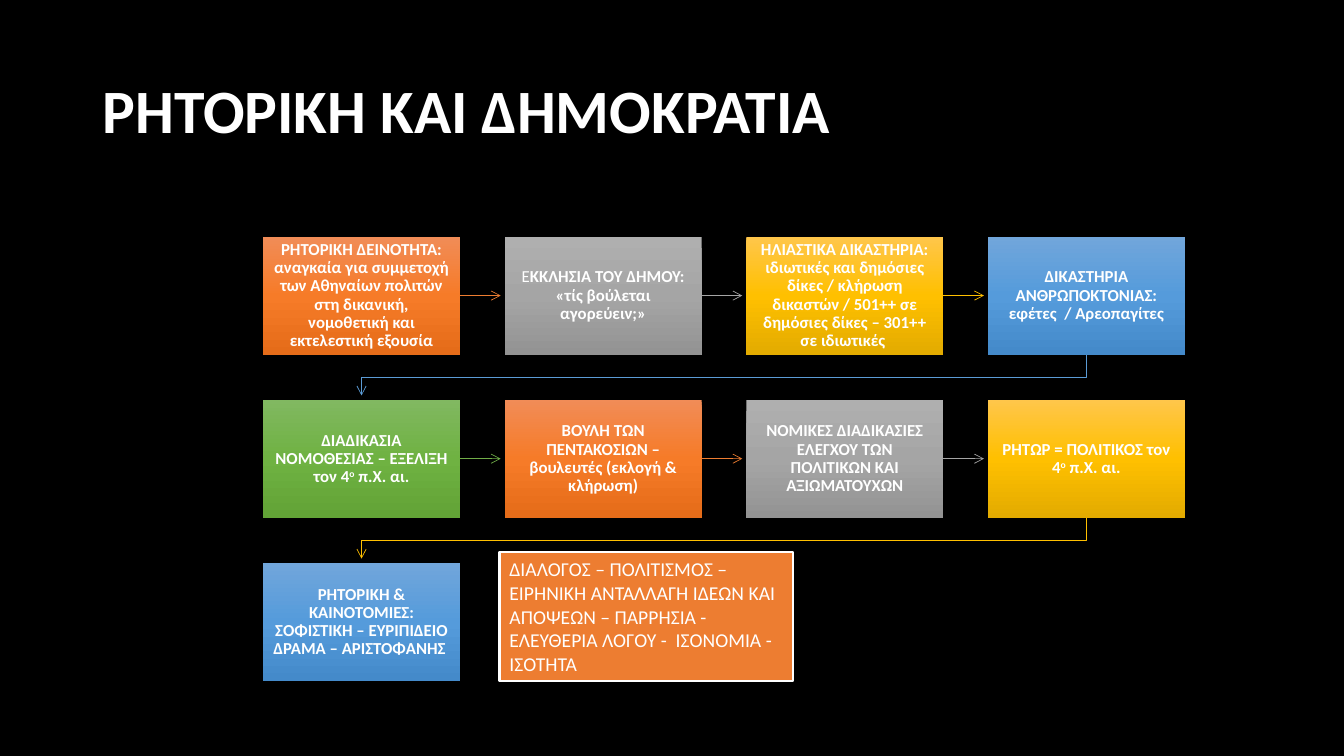
"""Build a slide on rhetoric and democracy as a snaking chain of steps."""
from copy import deepcopy
from dataclasses import dataclass

from lxml import etree
from pptx import Presentation
from pptx.dml.color import RGBColor
from pptx.enum.shapes import MSO_CONNECTOR, MSO_SHAPE
from pptx.enum.text import MSO_ANCHOR, MSO_AUTO_SIZE, PP_ALIGN
from pptx.oxml.ns import qn
from pptx.util import Pt

RECTANGLE = MSO_SHAPE.RECTANGLE
STRAIGHT = MSO_CONNECTOR.STRAIGHT
MIDDLE, TOP = MSO_ANCHOR.MIDDLE, MSO_ANCHOR.TOP
NO_FIT, GROW = MSO_AUTO_SIZE.NONE, MSO_AUTO_SIZE.SHAPE_TO_FIT_TEXT
LEFT, CENTER = PP_ALIGN.LEFT, PP_ALIGN.CENTER
RIGHT_SIDE = 3


@dataclass(frozen=True)
class Theme:
    """Colours, font and type sizes of the slide."""
    font: str = "Calibri"
    background: str = "000000"
    text: str = "FFFFFF"
    title_size: float = 44
    step_size: float = 12
    note_size: float = 14
    arrow_width: float = 0.5
    note_border: float = 1.5
    orange: tuple = ("ED7D31", "F18C57", "F67B28", "E56C19")
    grey: tuple = ("A5A5A5", "AFAFAF", "A5A5A5", "939393")
    gold: tuple = ("FFC000", "FFC64B", "FFC000", "E3AB00")
    blue: tuple = ("5B9BD5", "71A6DB", "559BDB", "448ACA")
    green: tuple = ("70AD47", "81B861", "6FB242", "62A336")


THEME = Theme()
PALETTE = (THEME.orange, THEME.grey, THEME.gold, THEME.blue, THEME.green)

COLUMNS = 4
GRID_LEFT, GRID_TOP = 188, 169
STEP_WIDTH, STEP_HEIGHT = 140.5, 84.3
COLUMN_PITCH, ROW_PITCH = 172.6, 116.5
ARROW_GAP = 3

PLAIN, BOLD, RAISED = "plain", "bold", "raised"
CENTURY = [("ο", RAISED), (" π.Χ. αι.", BOLD)]
STEPS = [
    [("ΡΗΤΟΡΙΚΗ ΔΕΙΝΟΤΗΤΑ: αναγκαία για συμμετοχή των Αθηναίων πολιτών "
      "στη δικανική, νομοθετική και εκτελεστική εξουσία", BOLD)],
    [("Ε", PLAIN), ("ΚΚΛΗΣΙΑ ΤΟΥ ΔΗΜΟΥ: «τίς βούλεται αγορεύειν;»", BOLD)],
    [("ΗΛΙΑΣΤΙΚΑ ΔΙΚΑΣΤΗΡΙΑ: ιδιωτικές και δημόσιες δίκες / κλήρωση "
      "δικαστών / 501++ σε δημόσιες δίκες – 301++ σε ιδιωτικές ", BOLD)],
    [("ΔΙΚΑΣΤΗΡΙΑ ΑΝΘΡΩΠΟΚΤΟΝΙΑΣ: εφέτες  / Αρεοπαγίτες", BOLD)],
    [("ΔΙΑΔΙΚΑΣΙΑ ΝΟΜΟΘΕΣΙΑΣ – ΕΞΕΛΙΞΗ τον 4", BOLD), *CENTURY],
    [("ΒΟΥΛΗ ΤΩΝ ΠΕΝΤΑΚΟΣΙΩΝ – βουλευτές (εκλογή & κλήρωση)", BOLD)],
    [("ΝΟΜΙΚΕΣ ΔΙΑΔΙΚΑΣΙΕΣ ΕΛΕΓΧΟΥ ΤΩΝ ΠΟΛΙΤΙΚΩΝ ΚΑΙ ΑΞΙΩΜΑΤΟΥΧΩΝ", BOLD)],
    [("ΡΗΤΩΡ = ΠΟΛΙΤΙΚΟΣ τον 4", BOLD), *CENTURY],
    [("ΡΗΤΟΡΙΚΗ & ΚΑΙΝΟΤΟΜΙΕΣ: ΣΟΦΙΣΤΙΚΗ – ΕΥΡΙΠΙΔΕΙΟ ΔΡΑΜΑ – "
      "ΑΡΙΣΤΟΦΑΝΗΣ ", BOLD)],
]
NOTE = [("ΔΙΑΛΟΓΟΣ – ΠΟΛΙΤΙΣΜΟΣ – ΕΙΡΗΝΙΚΗ ΑΝΤΑΛΛΑΓΗ ΙΔΕΩΝ ΚΑΙ ΑΠΟΨΕΩΝ – "
         "ΠΑΡΡΗΣΙΑ - ΕΛΕΥΘΕΡΙΑ ΛΟΓΟΥ -  ΙΣΟΝΟΜΙΑ -  ΙΣΟΤΗΤΑ", PLAIN)]


def rgb(code):
    """Turn a hex code into a colour."""
    return RGBColor.from_string(code)


def apply(target, formats):
    """Set each format value on the target."""
    for name, value in formats.items():
        setattr(target, name, value)


def write(shape, runs, size, align, spacing, frame_formats):
    """Write one paragraph of styled runs into a shape."""
    frame = shape.text_frame
    apply(frame, {"word_wrap": True, **frame_formats})
    paragraph = frame.paragraphs[0]
    apply(paragraph, {"alignment": align, "line_spacing": spacing})
    for text, style in runs:
        run = paragraph.add_run()
        run.text = text
        apply(run.font, {"name": THEME.font, "size": Pt(size), "bold": style != PLAIN})
        run.font.color.rgb = rgb(THEME.text)
        if style == RAISED:
            run.font._element.set("baseline", "30000")


def add_title(slide, text):
    """Place and format the title."""
    title = slide.shapes.title
    apply(title, {"left": Pt(66), "top": Pt(28.75), "width": Pt(828), "height": Pt(104.4)})
    write(title, [(text, BOLD)], THEME.title_size, LEFT, 0.9,
          {"vertical_anchor": MIDDLE, "auto_size": NO_FIT})


def add_box(slide, left, top, width, height):
    """Add a rectangle without a shadow."""
    box = slide.shapes.add_shape(RECTANGLE, Pt(left), Pt(top), Pt(width), Pt(height))
    box.shadow.inherit = False
    return box


def shade(shape, codes):
    """Fill a shape from top to bottom with evenly spaced colours."""
    shape.fill.gradient()
    shape.fill.gradient_angle = 270
    stop_list = shape._element.spPr.find(qn("a:gradFill")).find(qn("a:gsLst"))
    stop_list.insert(1, deepcopy(stop_list[0]))
    for index, (stop, code) in enumerate(zip(shape.fill.gradient_stops, codes)):
        stop.position = index / 2
        stop.color.rgb = rgb(code)


def step_position(index):
    """Return the left and top of a step in the grid."""
    row, column = divmod(index, COLUMNS)
    return GRID_LEFT + column * COLUMN_PITCH, GRID_TOP + row * ROW_PITCH


def add_step(slide, index, runs, shades):
    """Add one step of the chain."""
    step = add_box(slide, *step_position(index), STEP_WIDTH, STEP_HEIGHT)
    shade(step, shades)
    step.line.fill.background()
    margins = {f"margin_{side}": Pt(7.2) for side in ("left", "top", "right", "bottom")}
    write(step, runs, THEME.step_size, CENTER, 0.9, {"vertical_anchor": MIDDLE, **margins})
    return step


def style_arrow(arrow, code):
    """Colour a line and put an open arrowhead at its end."""
    arrow.line.color.rgb = rgb(code)
    arrow.line.width = Pt(THEME.arrow_width)
    head = etree.SubElement(arrow.line._get_or_add_ln(), qn("a:tailEnd"))
    head.set("type", "arrow")


def add_row_arrow(slide, index, step, code):
    """Point from a step to its right neighbour."""
    left, top = step_position(index)
    middle = Pt(top + STEP_HEIGHT / 2)
    arrow = slide.shapes.add_connector(
        STRAIGHT, Pt(left + STEP_WIDTH), middle, Pt(left + COLUMN_PITCH - ARROW_GAP), middle)
    arrow.begin_connect(step, RIGHT_SIDE)
    style_arrow(arrow, code)
    etree.SubElement(arrow._element.spPr, qn("a:effectLst"))


def add_turn_arrow(slide, index, code):
    """Lead from the end of a row to the start of the next."""
    left, top = step_position(index)
    next_left, next_top = step_position(index + 1)
    start_x, end_x = (Pt(x + STEP_WIDTH / 2) for x in (left, next_left))
    bottom = top + STEP_HEIGHT
    turn_y = Pt((bottom + next_top) / 2)
    builder = slide.shapes.build_freeform(start_x, Pt(bottom))
    builder.add_line_segments(
        [(start_x, turn_y), (end_x, turn_y), (end_x, Pt(next_top - ARROW_GAP))], close=False)
    arrow = builder.convert_to_shape()
    arrow.fill.background()
    arrow.shadow.inherit = False
    style_arrow(arrow, code)


def add_note(slide):
    """Add the bordered note beside the last step."""
    note = add_box(slide, 356.8, 394.6, 209.8, 92)
    note.fill.solid()
    note.fill.fore_color.rgb = rgb(THEME.orange[0])
    note.line.color.rgb = rgb(THEME.text)
    note.line.width = Pt(THEME.note_border)
    write(note, NOTE, THEME.note_size, LEFT, 1.0, {"vertical_anchor": TOP, "auto_size": GROW})


def main():
    """Build and save the slide."""
    deck = Presentation()
    apply(deck, {"slide_width": Pt(960), "slide_height": Pt(540)})
    slide = deck.slides.add_slide(deck.slide_layouts[5])
    slide.background.fill.solid()
    slide.background.fill.fore_color.rgb = rgb(THEME.background)
    add_title(slide, "ΡΗΤΟΡΙΚΗ ΚΑΙ ΔΗΜΟΚΡΑΤΙΑ")
    for index, runs in enumerate(STEPS):
        accent, *shades = PALETTE[index % len(PALETTE)]
        step = add_step(slide, index, runs, shades)
        if index % COLUMNS < COLUMNS - 1 and index < len(STEPS) - 1:
            add_row_arrow(slide, index, step, accent)
        elif index < len(STEPS) - 1:
            add_turn_arrow(slide, index, accent)
    add_note(slide)
    deck.save("out.pptx")


if __name__ == "__main__":
    main()
